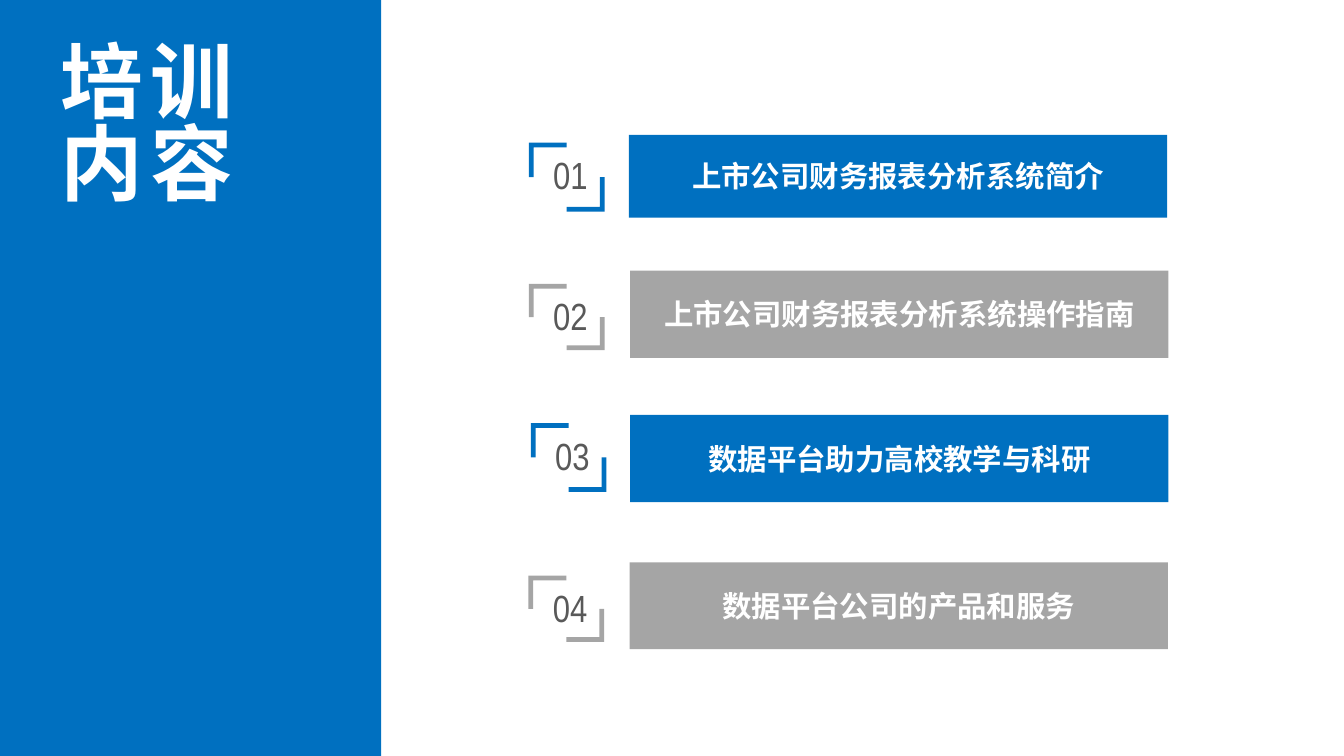
from lxml.etree import SubElement
from pptx import Presentation
from pptx.dml.color import RGBColor
from pptx.enum.shapes import MSO_SHAPE as SHAPE
from pptx.enum.text import MSO_ANCHOR as ANCHOR, PP_ALIGN as ALIGN
from pptx.oxml.ns import qn
from pptx.util import Pt

BLUE, GRAY, DARK, WHITE = "0070C0", "A5A5A5", "595959", "FFFFFF"
CJK_FONT = "Noto Sans CJK SC"
TITLE_FORMAT = {"size": Pt(59), "bold": True, "name": CJK_FONT}
BAR_FORMAT = {"size": Pt(21), "bold": True, "name": CJK_FONT}
NUMBER_FORMAT = {"size": Pt(27), "name": "Arial Narrow"}
BAR_WIDTH = 384.5
BRACKET_WIDTH, BRACKET_THICKNESS = 54, 3.4

# text, colour, latin font, bar (left, top, height), bracket (left, top, height)
TOPICS = [
    ("上市公司财务报表分析系统简介", BLUE, CJK_FONT, (449.2, 96.3, 59.2), (377.8, 102, 49.2)),
    ("上市公司财务报表分析系统操作指南", GRAY, CJK_FONT, (450.2, 193.3, 62.3), (377.8, 202.8, 47.4)),
    ("数据平台助力高校教学与科研", BLUE, CJK_FONT, (450.2, 296.4, 62.3), (379.2, 302.2, 49.2)),
    ("数据平台公司的产品和服务", GRAY, "Arial", (449.7, 401.7, 62), (377.5, 411.2, 47.4)),
]


def color(value):
    return RGBColor.from_string(value)


def paint(shape, fill):
    shape.shadow.inherit = False
    shape.fill.solid()
    shape.fill.fore_color.rgb = color(fill)
    shape.line.fill.background()


def set_margins(frame, horizontal, vertical):
    frame.word_wrap = True
    frame.margin_left = frame.margin_right = Pt(horizontal)
    frame.margin_top = frame.margin_bottom = Pt(vertical)


def write(paragraph, text, text_color, font_format, spacing=0):
    """Add one run; spacing is the letter spacing in points."""
    run = paragraph.add_run()
    run.text = text
    for name, value in font_format.items():
        setattr(run.font, name, value)
    run.font.color.rgb = color(text_color)
    properties = run.font._element
    if spacing:
        properties.set("spc", str(spacing * 100))
    east_asian = SubElement(properties, qn("a:ea"))
    east_asian.set("typeface", CJK_FONT)


def add_bar(slide, left, top, width, height, fill):
    bar = slide.shapes.add_shape(SHAPE.RECTANGLE, Pt(left), Pt(top), Pt(width), Pt(height))
    paint(bar, fill)
    return bar


def add_title(slide, lines):
    box = slide.shapes.add_textbox(Pt(33.8), Pt(28.1), Pt(236.2), Pt(152.6))
    frame = box.text_frame
    set_margins(frame, 9.4, 5)
    for index, line in enumerate(lines):
        paragraph = frame.add_paragraph() if index else frame.paragraphs[0]
        paragraph.line_spacing = 0.83
        write(paragraph, line, WHITE, TITLE_FORMAT, spacing=-4)


def add_topic_bar(slide, text, fill, latin_font, left, top, height):
    bar = add_bar(slide, left, top, BAR_WIDTH, height, fill)
    frame = bar.text_frame
    set_margins(frame, 9.4, 5)
    frame.vertical_anchor = ANCHOR.MIDDLE
    frame.paragraphs[0].alignment = ALIGN.CENTER
    write(frame.paragraphs[0], text, WHITE, BAR_FORMAT | {"name": latin_font})


def add_brackets(slide, left, top, height, fill):
    """Draw the top-left corner and the same corner turned by 180 degrees."""
    arm, thick = height / 2, BRACKET_THICKNESS
    middle = BRACKET_WIDTH / 2
    corner = [(0, 0), (middle, 0), (middle, thick), (thick, thick), (thick, arm), (0, arm)]
    turned = [(BRACKET_WIDTH - x, height - y) for x, y in corner]
    builder = None
    for outline in (corner, turned):
        points = [(Pt(left + x), Pt(top + y)) for x, y in outline]
        if builder is None:
            builder = slide.shapes.build_freeform(*points[0])
        else:
            builder.move_to(*points[0])
        builder.add_line_segments(points[1:], close=True)
    paint(builder.convert_to_shape(), fill)


def add_number(slide, number, left, top):
    box = slide.shapes.add_textbox(Pt(left), Pt(top), Pt(56.4), Pt(39.6))
    frame = box.text_frame
    set_margins(frame, 7.2, 3.6)
    frame.paragraphs[0].alignment = ALIGN.CENTER
    write(frame.paragraphs[0], f"{number:02}", DARK, NUMBER_FORMAT)


def main():
    presentation = Presentation()
    presentation.slide_width, presentation.slide_height = Pt(960), Pt(540)
    slide = presentation.slides.add_slide(presentation.slide_layouts[6])
    add_bar(slide, 0, -4.3, 272.2, 541.4 + 4.3, BLUE)
    add_title(slide, ["培 训", "内 容"])
    for number, (text, fill, latin_font, bar, bracket) in enumerate(TOPICS, start=1):
        left, top, height = bracket
        add_topic_bar(slide, text, fill, latin_font, *bar)
        add_brackets(slide, left, top, height, fill)
        add_number(slide, number, left + 1.5, top + 3)
    presentation.save("out.pptx")


if __name__ == "__main__":
    main()
